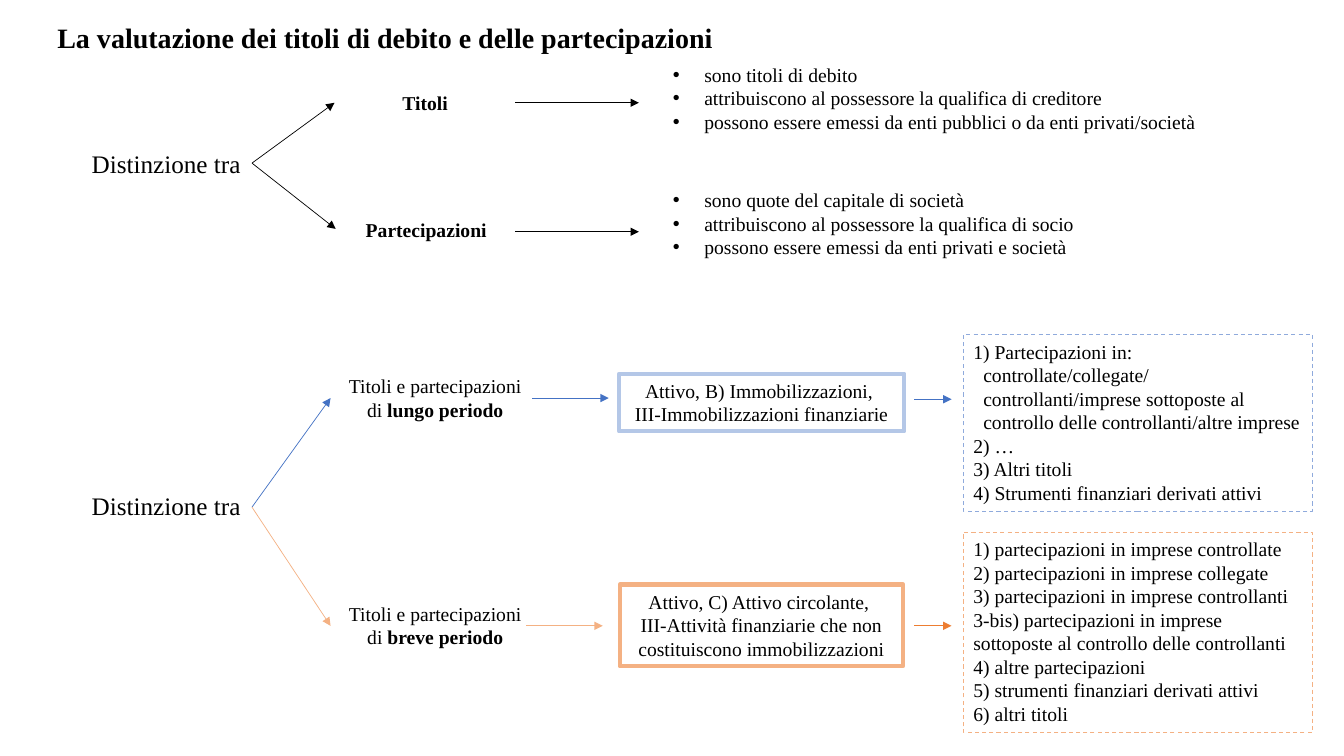
from dataclasses import dataclass
from typing import Optional

from lxml import etree
from pptx import Presentation
from pptx import util as u
from pptx.dml.color import RGBColor
from pptx.enum import dml, shapes, text
from pptx.oxml import ns

FONT = "Times New Roman"
COLOURS = {
    "black": "000000",
    "blue": "4472C4",
    "mid_blue": "8FAADC",
    "pale_blue": "B4C7E7",
    "orange": "ED7D31",
    "pale_orange": "F4B183",
}


@dataclass(frozen=True)
class Span:
    words: str
    bold: bool = False


@dataclass(frozen=True)
class Para:
    spans: tuple[Span, ...]
    margin: float = 0
    bullet: bool = False


@dataclass(frozen=True)
class Box:
    left: float
    top: float
    width: float
    height: float
    paras: tuple[Para, ...]
    size: int = 14
    centred: bool = False
    border: Optional[str] = None
    weight: float = 0.75
    dashed: bool = False


@dataclass(frozen=True)
class Arrow:
    start: tuple[float, float]
    end: tuple[float, float]
    colour: str = "black"


def lines(*rows: str, **style) -> tuple[Para, ...]:
    return tuple(Para((Span(row),), **style) for row in rows)


def heading(words: str) -> tuple[Para, ...]:
    return (Para((Span(words, True),)),)


def term(length: str) -> tuple[Para, ...]:
    return (Para((Span("Titoli e partecipazioni di "), Span(length, True))),)


def bullets(*rows: str) -> tuple[Para, ...]:
    return lines(*rows, margin=0.79, bullet=True)


def rgb(name: str) -> RGBColor:
    return RGBColor.from_string(COLOURS[name])


FORK_X = 6.35
FORK_Y, TERM_FORK_Y = 4.11, 12.78
TITOLI_Y, PARTECIPAZIONI_Y = 2.59, 5.84
LONG_Y, SHORT_Y = 10.03, 15.77

BOXES = [
    Box(2.06, 3.61, 4.29, 1.02, lines("Distinzione tra"), size=18),
    Box(2.06, 12.24, 4.29, 1.02, lines("Distinzione tra"), size=18),
    Box(8.43, 2.16, 4.57, 0.86, heading("Titoli"), centred=True),
    Box(8.46, 5.36, 4.57, 0.86, heading("Partecipazioni"), centred=True),
    Box(8.33, 9.3, 5.28, 1.45, term("lungo periodo"), centred=True),
    Box(8.33, 15.04, 5.28, 1.45, term("breve periodo"), centred=True),
    Box(16.71, 1.45, 13.69, 2.06, bullets(
        "sono titoli di debito",
        "attribuiscono al possessore la qualifica di creditore",
        "possono essere emessi da enti pubblici o da enti privati/società")),
    Box(16.71, 4.62, 13.69, 2.06, bullets(
        "sono quote del capitale di società",
        "attribuiscono al possessore la qualifica di socio",
        "possono essere emessi da enti privati e società")),
    Box(15.6, 9.42, 7.19, 1.45, lines(
        "Attivo, B) Immobilizzazioni, ",
        "III-Immobilizzazioni finanziarie"),
        centred=True, border="pale_blue", weight=3),
    Box(15.62, 14.73, 7.14, 2.06, lines(
        "Attivo, C) Attivo circolante, ",
        "III-Attività finanziarie che non costituiscono immobilizzazioni"),
        centred=True, border="pale_orange", weight=3),
    Box(24.28, 8.43, 8.79, 4.45,
        lines("1) Partecipazioni in:")
        + lines("controllate/collegate/ controllanti/imprese sottoposte al "
                "controllo delle controllanti/altre imprese", margin=0.25)
        + lines("2) …", "3) Altri titoli",
                "4) Strumenti finanziari derivati attivi"),
        border="mid_blue", dashed=True),
    Box(24.28, 13.41, 8.79, 5.05, lines(
        "1) partecipazioni in imprese controllate",
        "2) partecipazioni in imprese collegate",
        "3) partecipazioni in imprese controllanti",
        "3-bis) partecipazioni in imprese sottoposte al controllo delle controllanti",
        "4) altre partecipazioni",
        "5) strumenti finanziari derivati attivi",
        "6) altri titoli"),
        border="pale_orange", dashed=True),
]

ARROWS = [
    Arrow((FORK_X, FORK_Y), (8.43, TITOLI_Y)),
    Arrow((FORK_X, FORK_Y), (8.46, 5.77)),
    Arrow((12.98, TITOLI_Y), (16.1, TITOLI_Y)),
    Arrow((12.98, PARTECIPAZIONI_Y), (16.1, PARTECIPAZIONI_Y)),
    Arrow((FORK_X, TERM_FORK_Y), (8.33, LONG_Y), "blue"),
    Arrow((FORK_X, TERM_FORK_Y), (8.33, SHORT_Y), "pale_orange"),
    Arrow((13.41, LONG_Y), (15.34, LONG_Y), "blue"),
    Arrow((13.26, SHORT_Y), (15.19, SHORT_Y), "pale_orange"),
    Arrow((23.04, 10.06), (23.98, 10.06), "blue"),
    Arrow((23.04, SHORT_Y), (23.98, SHORT_Y), "orange"),
]


def add_span(paragraph, span: Span, size: int) -> None:
    run = paragraph.add_run()
    run.text = span.words
    run.font.name = FONT
    run.font.size = u.Pt(size)
    run.font.bold = span.bold
    run.font.color.rgb = rgb("black")


def indent(paragraph, para: Para) -> None:
    """Set the left margin, and hang a bullet in it when there is one."""
    props = paragraph._p.get_or_add_pPr()
    props.set("marL", str(u.Cm(para.margin)))
    if para.bullet:
        props.set("indent", str(-u.Cm(para.margin)))
        etree.SubElement(props, ns.qn("a:buFont"), typeface="Arial")
        etree.SubElement(props, ns.qn("a:buChar"), char="•")


def add_box(slide, box: Box) -> None:
    place = [u.Cm(n) for n in (box.left, box.top, box.width, box.height)]
    if box.border:
        shape = slide.shapes.add_shape(shapes.MSO_SHAPE.RECTANGLE, *place)
        shape.shadow.inherit = False
        shape.fill.background()
        shape.line.color.rgb = rgb(box.border)
        shape.line.width = u.Pt(box.weight)
        if box.dashed:
            shape.line.dash_style = dml.MSO_LINE.DASH
    else:
        shape = slide.shapes.add_textbox(*place)
    frame = shape.text_frame
    frame.word_wrap = True
    frame.vertical_anchor = text.MSO_ANCHOR.TOP
    for number, para in enumerate(box.paras):
        paragraph = frame.add_paragraph() if number else frame.paragraphs[0]
        paragraph.alignment = text.PP_ALIGN.CENTER if box.centred else text.PP_ALIGN.LEFT
        if para.margin:
            indent(paragraph, para)
        for span in para.spans:
            add_span(paragraph, span, box.size)


def add_arrow(slide, arrow: Arrow) -> None:
    ends = [u.Cm(n) for n in arrow.start + arrow.end]
    line = slide.shapes.add_connector(shapes.MSO_CONNECTOR.STRAIGHT, *ends)
    line.line.color.rgb = rgb(arrow.colour)
    line.line.width = u.Pt(0.5)
    etree.SubElement(line.line._get_or_add_ln(), ns.qn("a:tailEnd"), type="triangle")
    etree.SubElement(line._element.spPr, ns.qn("a:effectLst"))


def add_title(slide, words: str) -> None:
    title = slide.shapes.title
    title.left, title.top = u.Cm(1.19), u.Cm(0.28)
    title.width, title.height = u.Cm(29.21), u.Cm(1.45)
    title.text_frame.word_wrap = True
    title.text_frame.vertical_anchor = text.MSO_ANCHOR.MIDDLE
    paragraph = title.text_frame.paragraphs[0]
    paragraph.alignment = text.PP_ALIGN.LEFT
    paragraph.line_spacing = 0.9
    add_span(paragraph, Span(words, True), 20)


def main() -> None:
    deck = Presentation()
    deck.slide_width, deck.slide_height = u.Cm(33.87), u.Cm(19.05)
    slide = deck.slides.add_slide(deck.slide_layouts.get_by_name("Title Only"))
    add_title(slide, "La valutazione dei titoli di debito e delle partecipazioni")
    for box in BOXES:
        add_box(slide, box)
    for arrow in ARROWS:
        add_arrow(slide, arrow)
    deck.save("out.pptx")


if __name__ == "__main__":
    main()
